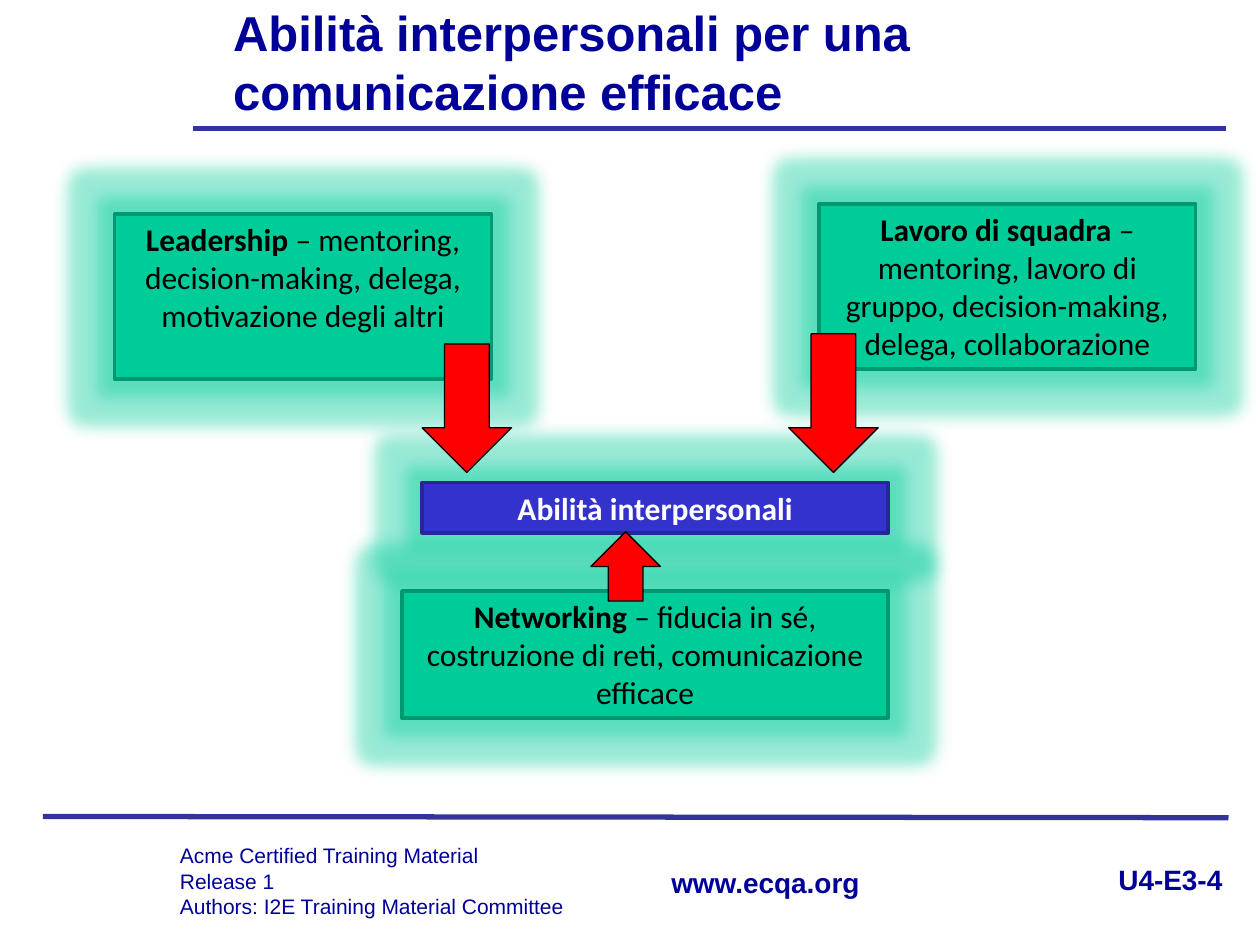
"""Build the slide on interpersonal skills for effective communication."""
from lxml import etree
from pptx import Presentation
from pptx.dml.color import RGBColor
from pptx.enum.shapes import MSO_CONNECTOR, MSO_SHAPE
from pptx.enum.text import MSO_ANCHOR, PP_ALIGN
from pptx.oxml.ns import qn
from pptx.util import Inches, Pt

LEFT, CENTER, RIGHT = PP_ALIGN.LEFT, PP_ALIGN.CENTER, PP_ALIGN.RIGHT
TOP, MIDDLE = MSO_ANCHOR.TOP, MSO_ANCHOR.MIDDLE
RECTANGLE, DOWN_ARROW = MSO_SHAPE.RECTANGLE, MSO_SHAPE.DOWN_ARROW
STRAIGHT = MSO_CONNECTOR.STRAIGHT
TITLE_ONLY = 5

COLORS = {
    "navy": "000099",
    "rule": "333399",
    "goal": "3333CC",
    "goal_edge": "262697",
    "skill": "00CC99",
    "skill_edge": "009771",
    "arrow": "FF0000",
    "black": "000000",
    "white": "FFFFFF",
}

SKILLS = [
    ((6.5, 1.62, 2.99, 1.31), "Lavoro di squadra ",
     "– mentoring, lavoro di gruppo, decision-making, delega, collaborazione"),
    ((0.91, 1.7, 2.99, 1.31), "Leadership ",
     "– mentoring, decision-making, delega, motivazione degli altri"),
    ((3.19, 4.69, 3.86, 1.01), "Networking",
     " – fiducia in sé, costruzione di reti, comunicazione efficace"),
]
ARROWS = [
    ((3.35, 2.73, 0.71, 1.02), 0),
    ((6.26, 2.65, 0.71, 1.1), 0),
    ((4.69, 4.22, 0.55, 0.55), 180),
]
FOOTERS = [
    ((8.12, 6.8, 1.68, 0.37), "U4-E3-4", 16, True, RIGHT),
    ((5.23, 6.82, 1.76, 0.37), "www.ecqa.org", 16, True, LEFT),
    ((1.33, 6.64, 3.59, 0.71),
     "Acme Certified Training Material\vRelease 1\n"
     "Authors: I2E Training Material Committee", 12, False, LEFT),
]


def color(name):
    """Return the named colour."""
    return RGBColor.from_string(COLORS[name])


def inches(box):
    """Convert a tuple of numbers to lengths."""
    return [Inches(value) for value in box]


def style_paragraph(paragraph, face, size, color_name, bold=None, align=LEFT):
    """Set the font and alignment of a paragraph."""
    paragraph.alignment = align
    font = paragraph.font
    font.name, font.size, font.bold = face, Pt(size), bold
    font.color.rgb = color(color_name)


def add_title(slide, text):
    """Place and format the slide title."""
    title = slide.shapes.title
    title.left, title.top, title.width, title.height = inches((1.75, 0, 7.9, 0.98))
    title.text_frame.text = text
    title.text_frame.vertical_anchor = MIDDLE
    style_paragraph(title.text_frame.paragraphs[0], "Arial", 28, "navy", True)


def add_rule(slide, ends):
    """Draw a horizontal rule."""
    rule = slide.shapes.add_connector(STRAIGHT, *inches(ends))
    rule.line.color.rgb = color("rule")
    rule.line.width = Pt(3)
    etree.SubElement(rule._element.spPr, qn("a:effectLst"))


def add_footer(slide, box, text, size, bold, align):
    """Add one footer text."""
    frame = slide.shapes.add_textbox(*inches(box)).text_frame
    frame.word_wrap = True
    frame.text = text
    for paragraph in frame.paragraphs:
        style_paragraph(paragraph, "Arial", size, "navy", bold, align)


def add_filled_shape(slide, kind, box, fill, edge, width):
    """Add a preset shape with fill and outline."""
    shape = slide.shapes.add_shape(kind, *inches(box))
    shape.shadow.inherit = False
    shape.fill.solid()
    shape.fill.fore_color.rgb = color(fill)
    shape.line.color.rgb = color(edge)
    shape.line.width = Pt(width)
    return shape


def add_glow(shape):
    """Surround a shape with a soft green glow."""
    effects = shape._element.spPr.find(qn("a:effectLst"))
    glow = etree.SubElement(effects, qn("a:glow"), rad=str(Pt(18)))
    tint = etree.SubElement(glow, qn("a:srgbClr"), val=COLORS["skill"])
    etree.SubElement(tint, qn("a:alpha"), val="40000")


def add_skill_box(slide, box, heading, details, fill, text_color):
    """Add a glowing box with a bold heading and optional details."""
    skill = add_filled_shape(slide, RECTANGLE, box, fill, f"{fill}_edge", 2)
    add_glow(skill)
    frame = skill.text_frame
    frame.word_wrap = True
    frame.vertical_anchor = TOP
    paragraph = frame.paragraphs[0]
    style_paragraph(paragraph, "Calibri", 18, text_color, align=CENTER)
    for text, bold in ((heading, True), (details, False)):
        if text:
            run = paragraph.add_run()
            run.text = text
            run.font.bold = bold


def add_arrow(slide, box, rotation):
    """Add a red block arrow."""
    arrow = add_filled_shape(slide, DOWN_ARROW, box, "arrow", "black", 0.75)
    arrow.rotation = rotation


def main():
    """Build and save the slide."""
    deck = Presentation()
    deck.slide_width, deck.slide_height = Inches(10), Inches(7.5)
    slide = deck.slides.add_slide(deck.slide_layouts[TITLE_ONLY])
    add_rule(slide, (1.53, 1.02, 9.73, 1.02))
    add_rule(slide, (0.34, 6.48, 9.75, 6.49))
    for footer in FOOTERS:
        add_footer(slide, *footer)
    add_title(slide, "Abilità interpersonali per una comunicazione efficace")
    add_skill_box(slide, (3.35, 3.83, 3.7, 0.4), "Abilità interpersonali", "",
                  "goal", "white")
    for box, heading, details in SKILLS:
        add_skill_box(slide, box, heading, details, "skill", "black")
    for box, rotation in ARROWS:
        add_arrow(slide, box, rotation)
    deck.save("out.pptx")


if __name__ == "__main__":
    main()
